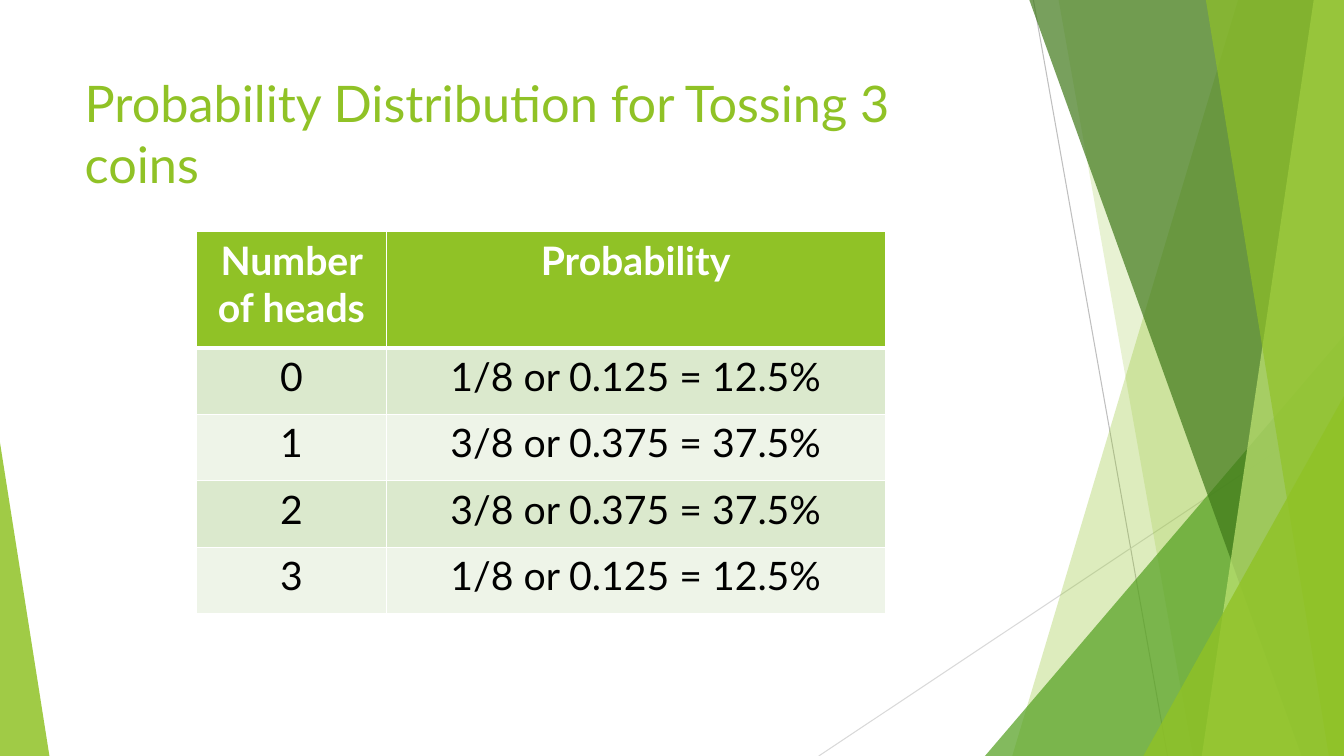
"""Build a slide with the probability distribution for tossing three coins."""
from lxml import etree
from pptx import Presentation
from pptx import util as u
from pptx.dml.color import RGBColor
from pptx.enum import shapes, text
from pptx.oxml.ns import qn

WHITE = RGBColor(0xFF, 0xFF, 0xFF)
BLACK = RGBColor(0, 0, 0)
LIME = RGBColor(0x90, 0xC2, 0x26)
GREEN = RGBColor(0x54, 0xA0, 0x21)
FOREST = RGBColor(0x3F, 0x78, 0x19)
PALE_LIME = RGBColor(0xC0, 0xE4, 0x74)
BANDS = [RGBColor(0xDB, 0xE9, 0xCD), RGBColor(0xEE, 0xF4, 0xE8)]
SILVER = RGBColor(0xBF, 0xBF, 0xBF)
MIST = RGBColor(0xD9, 0xD9, 0xD9)

FONT = "Lato"
TITLE = "Probability Distribution for Tossing 3 coins"
ROWS = [
    ("Number of heads", "Probability"),
    ("0", "1/8 or 0.125 = 12.5%"),
    ("1", "3/8 or 0.375 = 37.5%"),
    ("2", "3/8 or 0.375 = 37.5%"),
    ("3", "1/8 or 0.125 = 12.5%"),
]

# Positions are percentages of the slide's width and height.
TITLE_BOX = (5.55, 8.93, 69, 19.2)
TABLE_CORNER = (14.63, 30.67)
COLUMN_WIDTHS = (14.1, 37.13)
HEADER_HEIGHT, ROW_HEIGHT = 15.33, 8.8
RAYS = [
    ((76.89, 0), (86.87, 100), SILVER),
    ((100, 53.73), (60.92, 100), MIST),
]
FACETS = [
    ("panel", 92.12, 75.32, LIME, 30),
    ("panel", 78.77, 88.75, LIME, 20),
    ("right corner", 73.29, 44.4, GREEN, 72),
    ("panel", 76.59, 96.85, FOREST, 70),
    ("panel", 97.75, 89.42, PALE_LIME, 70),
    ("panel", 89.72, 98.87, LIME, 65),
    ("right corner", 85.07, 52.4, LIME, 80),
    ("left corner", 3.68, 58.53, LIME, 85),
]

presentation = Presentation()
presentation.slide_width, presentation.slide_height = u.Inches(13.33), u.Inches(7.5)
slide = presentation.slides.add_slide(presentation.slide_layouts[5])


def across(percent):
    return round(presentation.slide_width * percent / 100)


def down(percent):
    return round(presentation.slide_height * percent / 100)


def add_ray(start, end, color):
    line = slide.shapes.add_connector(
        shapes.MSO_CONNECTOR.STRAIGHT,
        across(start[0]), down(start[1]), across(end[0]), down(end[1]))
    line.line.color.rgb = color
    line.line.width = u.Pt(0.75)
    etree.SubElement(line._element.spPr, qn("a:effectLst"))


def add_panel(top_x, bottom_x):
    builder = slide.shapes.build_freeform(across(top_x), 0)
    corners = [(100, 0), (100, 100), (bottom_x, 100)]
    builder.add_line_segments([(across(x), down(y)) for x, y in corners])
    return builder.convert_to_shape()


def add_corner(left, right, top, apex):
    triangle = slide.shapes.add_shape(
        shapes.MSO_SHAPE.ISOSCELES_TRIANGLE,
        across(left), down(top), across(right - left), down(100 - top))
    triangle.adjustments[0] = apex
    return triangle


def add_facet(kind, first, second, color, opacity):
    if kind == "panel":
        facet = add_panel(first, second)
    elif kind == "right corner":
        facet = add_corner(first, 100, second, 1)
    else:
        facet = add_corner(0, first, second, 0)
    facet.shadow.inherit = False
    facet.line.fill.background()
    facet.fill.solid()
    facet.fill.fore_color.rgb = color
    color_node = facet._element.spPr.find(qn("a:solidFill"))[0]
    etree.SubElement(color_node, qn("a:alpha"), val=str(opacity * 1000))


def style_text(paragraph, size, color, alignment, bold=False):
    paragraph.alignment = alignment
    paragraph.font.name = FONT
    paragraph.font.size = u.Pt(size)
    paragraph.font.bold = bold
    paragraph.font.color.rgb = color


def add_borders(cell, widths):
    properties = cell._tc.get_or_add_tcPr()
    for index, (side, width) in enumerate(widths.items()):
        border = etree.Element(qn(f"a:{side}"), w=str(u.Pt(width)))
        fill = etree.SubElement(border, qn("a:solidFill"))
        etree.SubElement(fill, qn("a:srgbClr"), val=str(WHITE))
        properties.insert(index, border)


def add_title():
    title = slide.shapes.title
    left, top, width, height = TITLE_BOX
    title.left, title.top = across(left), down(top)
    title.width, title.height = across(width), down(height)
    title.text_frame.text = TITLE
    title.text_frame.word_wrap = True
    title.text_frame.auto_size = text.MSO_AUTO_SIZE.NONE
    title.text_frame.vertical_anchor = text.MSO_ANCHOR.TOP
    style_text(title.text_frame.paragraphs[0], 36, LIME, text.PP_ALIGN.LEFT)


def add_distribution():
    heights = [HEADER_HEIGHT] + [ROW_HEIGHT] * (len(ROWS) - 1)
    table = slide.shapes.add_table(
        len(ROWS), len(COLUMN_WIDTHS), across(TABLE_CORNER[0]), down(TABLE_CORNER[1]),
        across(sum(COLUMN_WIDTHS)), down(sum(heights))).table
    for column, width in zip(table.columns, COLUMN_WIDTHS):
        column.width = across(width)
    for number, (row, height, values) in enumerate(zip(table.rows, heights, ROWS)):
        row.height = down(height)
        header = number == 0
        for cell, value in zip(row.cells, values):
            cell.text = value
            style_text(cell.text_frame.paragraphs[0], 28, WHITE if header else BLACK,
                       text.PP_ALIGN.CENTER, header)
            cell.fill.solid()
            cell.fill.fore_color.rgb = LIME if header else BANDS[(number - 1) % 2]
            add_borders(cell, {"lnL": 1, "lnR": 1, "lnT": 3 if number == 1 else 1,
                               "lnB": 3 if header else 1})


for ray in RAYS:
    add_ray(*ray)
for facet_row in FACETS:
    add_facet(*facet_row)
add_title()
add_distribution()
presentation.save("out.pptx")
